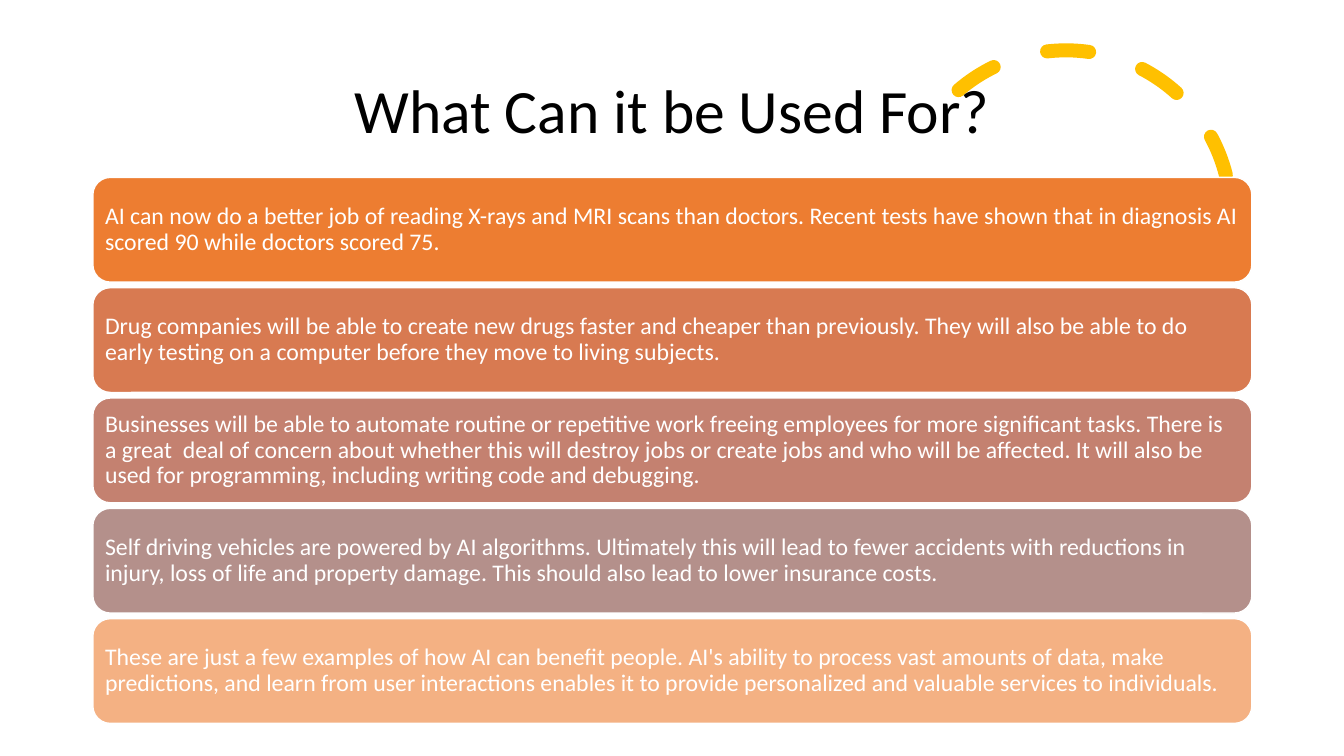
from pptx import Presentation
from pptx.dml.color import RGBColor
from pptx.enum.dml import MSO_LINE
from pptx.enum.shapes import MSO_SHAPE as Shape
from pptx.enum.text import MSO_ANCHOR as Anchor, PP_ALIGN as Align
from pptx.util import Cm, Pt

BLACK = RGBColor(0x00, 0x00, 0x00)
WHITE = RGBColor(0xFF, 0xFF, 0xFF)
GOLD = RGBColor(0xFF, 0xC0, 0x00)
ORANGE = RGBColor(0xED, 0x7D, 0x31)
TERRACOTTA = RGBColor(0xD8, 0x7A, 0x51)
CLAY = RGBColor(0xC4, 0x81, 0x70)
MAUVE = RGBColor(0xB4, 0x90, 0x8B)
PEACH = RGBColor(0xF4, 0xB1, 0x83)

TITLE = "What Can it be Used For?"
USES = [
    (ORANGE, "AI can now do a better job of reading X-rays and MRI scans than doctors. "
             "Recent tests have shown that in diagnosis AI scored 90 while doctors scored 75."),
    (TERRACOTTA, "Drug companies will be able to create new drugs faster and cheaper than previously. "
                 "They will also be able to do early testing on a computer before they move to "
                 "living subjects."),
    (CLAY, "Businesses will be able to automate routine or repetitive work freeing employees for "
           "more significant tasks. There is a great  deal of concern about whether this will "
           "destroy jobs or create jobs and who will be affected. It will also be used for "
           "programming, including writing code and debugging."),
    (MAUVE, "Self driving vehicles are powered by AI algorithms. Ultimately this will lead to fewer "
            "accidents with reductions in injury, loss of life and property damage. This should "
            "also lead to lower insurance costs."),
    (PEACH, "These are just a few examples of how AI can benefit people. AI's ability to process "
            "vast amounts of data, make predictions, and learn from user interactions enables it "
            "to provide personalized and valuable services to individuals."),
]

LEFT, WIDTH = 2.34, 29.21
BAR_TOP, BAR_HEIGHT, BAR_PITCH = 4.47, 2.64, 2.78
BAR_INSET = Cm(0.18)
ARC_START = 146.13


def write(frame, text, size, color, align):
    frame.word_wrap = True
    frame.vertical_anchor = Anchor.MIDDLE
    para = frame.paragraphs[0]
    para.text = text
    para.alignment = align
    para.line_spacing = 0.9
    para.font.name = "Calibri"
    para.font.size = Pt(size)
    para.font.color.rgb = color


def add_arc(page):
    arc = page.shapes.add_shape(Shape.ARC, Cm(22.71), Cm(1.27), Cm(8.31), Cm(8.31))
    arc.adjustments[0] = ARC_START
    arc.adjustments[1] = 0
    arc.rotation = 345.8
    arc.shadow.inherit = False
    arc.fill.background()
    arc.line.color.rgb = GOLD
    arc.line.width = Pt(10)
    arc.line.dash_style = MSO_LINE.DASH
    arc.line._get_or_add_ln().set("cap", "rnd")
    page.shapes._spTree.insert(2, arc._element)


def add_bar(page, row, color, text):
    bar = page.shapes.add_shape(Shape.ROUNDED_RECTANGLE, Cm(LEFT), Cm(BAR_TOP + row * BAR_PITCH),
                                Cm(WIDTH), Cm(BAR_HEIGHT))
    bar.shadow.inherit = False
    bar.fill.solid()
    bar.fill.fore_color.rgb = color
    bar.line.color.rgb = WHITE
    bar.line.width = Pt(1)
    frame = bar.text_frame
    frame.margin_left = frame.margin_right = BAR_INSET
    frame.margin_top = frame.margin_bottom = BAR_INSET
    write(frame, text, 17, WHITE, Align.LEFT)


def main():
    deck = Presentation()
    deck.slide_width, deck.slide_height = Cm(33.87), Cm(19.05)
    page = deck.slides.add_slide(deck.slide_layouts[5])
    title = page.shapes.title
    title.left, title.top, title.width, title.height = Cm(LEFT), Cm(1.02), Cm(WIDTH), Cm(3.68)
    write(title.text_frame, TITLE, 44, BLACK, Align.CENTER)
    add_arc(page)
    for row, (color, text) in enumerate(USES):
        add_bar(page, row, color, text)
    deck.save("out.pptx")


if __name__ == "__main__":
    main()
